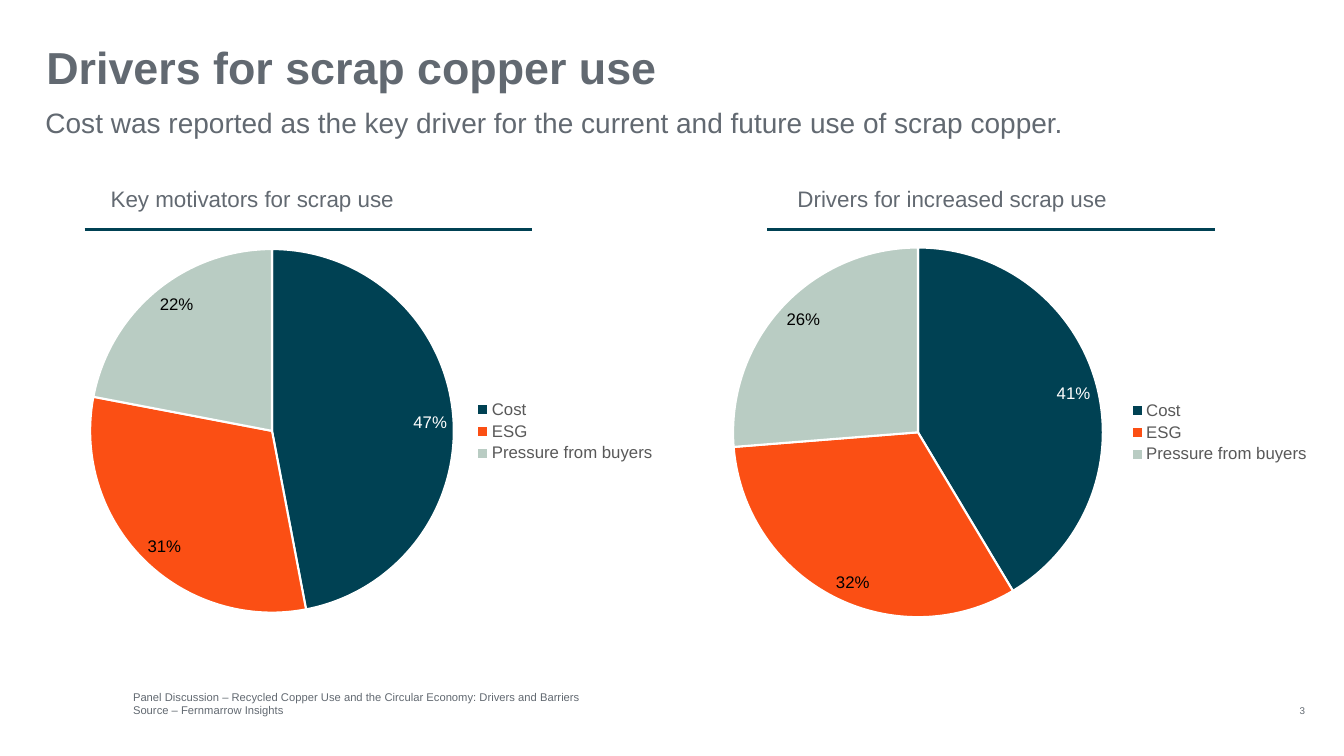
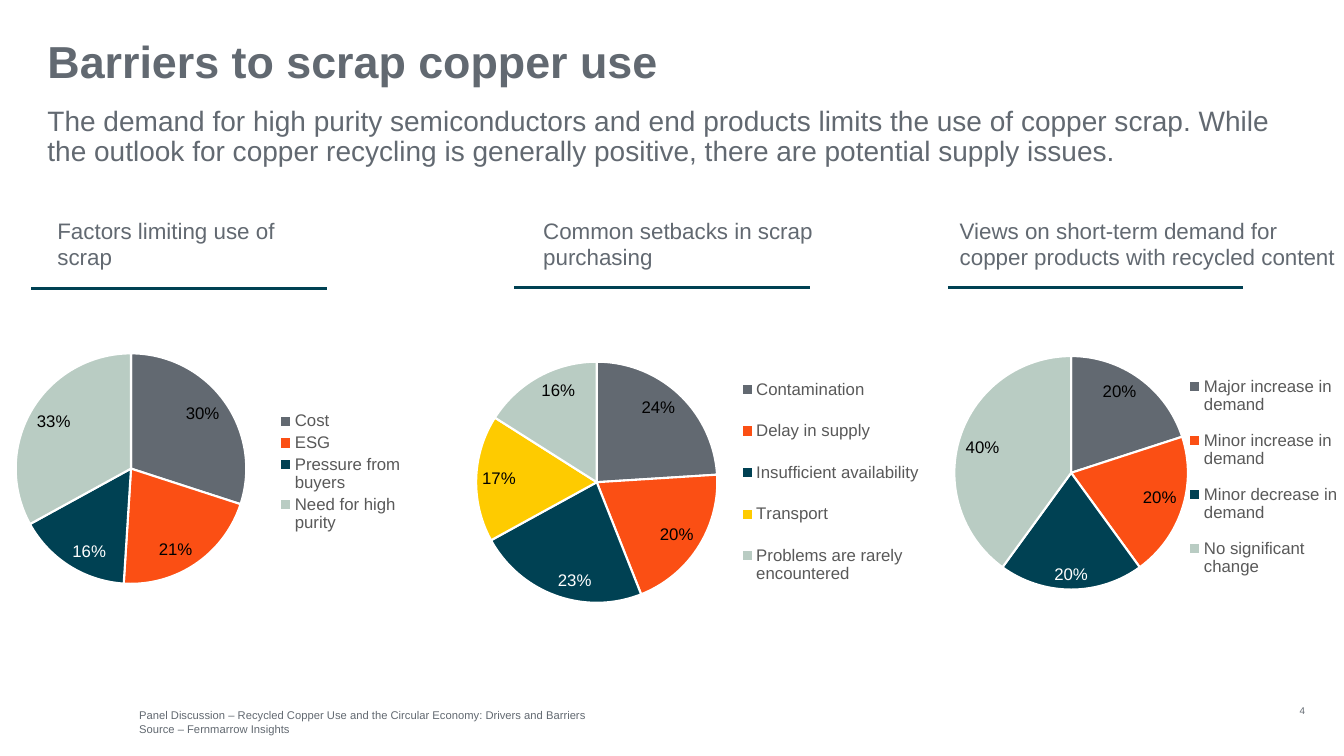
from dataclasses import dataclass
from lxml import etree
from pptx import Presentation
from pptx import util as u
from pptx.chart.data import CategoryChartData
from pptx.dml.color import RGBColor
from pptx.enum import chart as charts, shapes, text
from pptx.oxml.ns import qn


# Theme: colours and type sizes
@dataclass(frozen=True)
class Theme:
    font: str = "Arial"
    grey: str = "626971"
    teal: str = "004153"
    orange: str = "FB4F14"
    sage: str = "B9CCC3"
    yellow: str = "FECB00"
    legend: str = "595959"
    white: str = "FFFFFF"
    black: str = "000000"
    title_size: int = 32
    subtitle_size: int = 20
    heading_size: int = 16
    chart_size: int = 12
    footer_size: int = 8
    number_size: int = 7
    rule_width: float = 2.25
    slice_gap: float = 1.5


THEME = Theme()
WIDTH, HEIGHT = u.Inches(13.33), u.Inches(7.5)
FOOTER = ("Panel Discussion – Recycled Copper Use and the Circular Economy: Drivers and Barriers\n"
          "Source – Fernmarrow Insights")


# Positions are percentages of the slide's width and height
def across(share):
    return u.Emu(round(WIDTH * share / 100))


def down(share):
    return u.Emu(round(HEIGHT * share / 100))


def place(box):
    left, top, width, height = box
    return across(left), down(top), across(width), down(height)


def style_font(font, size, color, bold=False):
    font.name = THEME.font
    font.size = u.Pt(size)
    font.bold = bold
    font.color.rgb = RGBColor.from_string(color)


def add_text(slide, box, words, size, bold=False, inset=0.0, spacing=None,
             align=text.PP_ALIGN.LEFT, anchor=text.MSO_ANCHOR.TOP):
    frame = slide.shapes.add_textbox(*place(box)).text_frame
    frame.word_wrap = True
    frame.vertical_anchor = anchor
    frame.margin_left = frame.margin_right = u.Inches(inset)
    frame.margin_top = frame.margin_bottom = u.Inches(inset / 2)
    frame.text = words
    for paragraph in frame.paragraphs:
        paragraph.alignment = align
        paragraph.line_spacing = spacing
        for run in paragraph.runs:
            style_font(run.font, size, THEME.grey, bold)


def add_rule(slide, left, top, width):
    line = slide.shapes.add_connector(shapes.MSO_CONNECTOR.STRAIGHT, across(left), down(top),
                                      across(left + width), down(top))
    line.line.color.rgb = RGBColor.from_string(THEME.teal)
    line.line.width = u.Pt(THEME.rule_width)
    etree.SubElement(line.element.spPr, qn("a:effectLst"))


# Charts
def make_layout(frame, box, inner=False):
    """Express a slide box as a manual layout inside the chart frame."""
    shares = ((box[0] - frame[0]) / frame[2], (box[1] - frame[1]) / frame[3],
              box[2] / frame[2], box[3] / frame[3])
    layout = etree.Element(qn("c:layout"))
    manual = etree.SubElement(layout, qn("c:manualLayout"))
    settings = [("layoutTarget", "inner")] if inner else []
    settings += [("xMode", "edge"), ("yMode", "edge")]
    settings += [(name, f"{share:.4f}") for name, share in zip("xywh", shares)]
    for name, value in settings:
        etree.SubElement(manual, qn(f"c:{name}")).set("val", value)
    return layout


def color_slices(series, colors):
    for index, color in enumerate(colors):
        point = series.points[index]
        point.format.fill.solid()
        point.format.fill.fore_color.rgb = RGBColor.from_string(color)
        point.format.line.color.rgb = RGBColor.from_string(THEME.white)
        point.format.line.width = u.Pt(THEME.slice_gap)
        if color == THEME.teal:
            style_font(point.data_label.font, THEME.chart_size, THEME.white)
            point.data_label.position = charts.XL_LABEL_POSITION.INSIDE_END


def label_slices(chart, series):
    labels = series.data_labels
    labels.show_percentage, labels.show_value = True, False
    labels.number_format, labels.number_format_is_linked = "0%", False
    labels.position = charts.XL_LABEL_POSITION.INSIDE_END
    style_font(labels.font, THEME.chart_size, THEME.black)
    for label in chart.element.iter(qn("c:dLbl")):
        label.find(qn("c:showVal")).set("val", "0")
        label.find(qn("c:showPercent")).set("val", "1")


def add_pie(slide, frame, center, diameter, slices, colors, legend_box=None):
    data = CategoryChartData()
    data.categories = list(slices)
    data.add_series("Series 1", slices.values())
    chart = slide.shapes.add_chart(charts.XL_CHART_TYPE.PIE, *place(frame), data).chart
    chart.has_title = False
    style_font(chart.font, THEME.chart_size, THEME.black)
    chart.plots[0].vary_by_categories = True
    series = chart.plots[0].series[0]
    color_slices(series, colors)
    label_slices(chart, series)

    chart.has_legend = True
    chart.legend.position = charts.XL_LEGEND_POSITION.RIGHT
    chart.legend.include_in_layout = False
    style_font(chart.legend.font, THEME.chart_size, THEME.legend)

    # The diameter is a share of the height, so its width share is smaller
    wide = diameter * HEIGHT / WIDTH
    pie_box = (center[0] - wide / 2, center[1] - diameter / 2, wide, diameter)
    area = chart.element.find(".//" + qn("c:plotArea"))
    for layout in area.findall(qn("c:layout")):
        area.remove(layout)
    area.insert(0, make_layout(frame, pie_box, inner=True))
    if legend_box:
        legend = chart.element.find(".//" + qn("c:legend"))
        for layout in legend.findall(qn("c:layout")):
            legend.remove(layout)
        legend.find(qn("c:legendPos")).addnext(make_layout(frame, legend_box))


# Parts that every slide has
def add_base(presentation, number, title, title_at, subtitle, subtitle_at, footer_at):
    slide = presentation.slides.add_slide(presentation.slide_layouts[6])
    add_text(slide, (*title_at, 92.4, 7.6), title, THEME.title_size, bold=True, spacing=0.9)
    add_text(slide, (*subtitle_at, 92.5, 8.4), subtitle, THEME.subtitle_size, spacing=0.9)
    add_text(slide, (*footer_at, 66.5, 3.6), FOOTER, THEME.footer_size,
             anchor=text.MSO_ANCHOR.BOTTOM)
    add_text(slide, (94.9, 92.1, 2.2, 2.7), str(number), THEME.number_size,
             align=text.PP_ALIGN.RIGHT, anchor=text.MSO_ANCHOR.BOTTOM)
    return slide


def add_panel(slide, heading, heading_box, rule, **pie):
    add_pie(slide, **pie)
    add_text(slide, heading_box, heading, THEME.heading_size, inset=0.1)
    add_rule(slide, *rule)


def add_drivers(presentation):
    slide = add_base(presentation, 3, "Drivers for scrap copper use", (3.45, 6),
                     "Cost was reported as the key driver for the current and future use "
                     "of scrap copper.", (3.38, 14.4), (9.9, 91.2))
    colors = (THEME.teal, THEME.orange, THEME.sage)
    names = ("Cost", "ESG", "Pressure from buyers")
    add_panel(slide, "Key motivators for scrap use", (7.5, 23.87, 30.5, 4.9), (6.3, 30.4, 33.3),
              frame=(5.63, 28.27, 43.96, 57.6), center=(20.24, 57), diameter=48.1,
              slices=dict(zip(names, (47, 31, 22))), colors=colors)
    add_panel(slide, "Drivers for increased scrap use", (58.6, 23.87, 33.8, 4.9),
              (57.1, 30.4, 33.3),
              frame=(53.41, 28.4, 44.86, 57.6), center=(68.3, 57.2), diameter=48.9,
              slices=dict(zip(names, (41, 32, 26))), colors=colors)


def add_barriers(presentation):
    slide = add_base(presentation, 4, "Barriers to scrap copper use", (3.53, 5.2),
                     "The demand for high purity semiconductors and end products limits the use "
                     "of copper scrap. While the outlook for copper recycling is generally "
                     "positive, there are potential supply issues.", (3.53, 14.13), (10.35, 93.7))
    colors = (THEME.grey, THEME.orange, THEME.teal, THEME.sage)
    add_panel(slide, "Factors limiting use of scrap", (3.53, 28, 22.06, 8.5), (2.33, 38.13, 22),
              frame=(0, 41.87, 30.83, 41.07), center=(9.75, 62), diameter=30.5,
              slices={"Cost": 30, "ESG": 21, "Pressure from buyers": 16,
                      "Need for high purity": 33}, colors=colors)
    add_panel(slide, "Common setbacks in scrap purchasing", (39.68, 28, 23.7, 8.5),
              (38.26, 38, 22),
              frame=(33.83, 42.27, 35.18, 41.07), center=(44.4, 63.8), diameter=31.9,
              slices={"Contamination": 24, "Delay in supply": 20, "Insufficient availability": 23,
                      "Transport": 17, "Problems are rarely encountered": 16},
              colors=(*colors[:3], THEME.yellow, THEME.sage), legend_box=(54.7, 47.2, 14.2, 33))
    add_panel(slide, "Views on short-term demand for copper products with recycled content",
              (70.67, 28, 29.7, 8.5), (70.52, 38, 22),
              frame=(67.67, 43.73, 32.41, 38), center=(79.7, 62.55), diameter=30.9,
              slices={"Major increase in demand": 20, "Minor increase in demand": 20,
                      "Minor decrease in demand": 20, "No significant change": 40},
              colors=colors, legend_box=(88.3, 47.6, 11.7, 31))


def main():
    presentation = Presentation()
    presentation.slide_width, presentation.slide_height = WIDTH, HEIGHT
    add_drivers(presentation)
    add_barriers(presentation)
    presentation.save("out.pptx")


if __name__ == "__main__":
    main()
